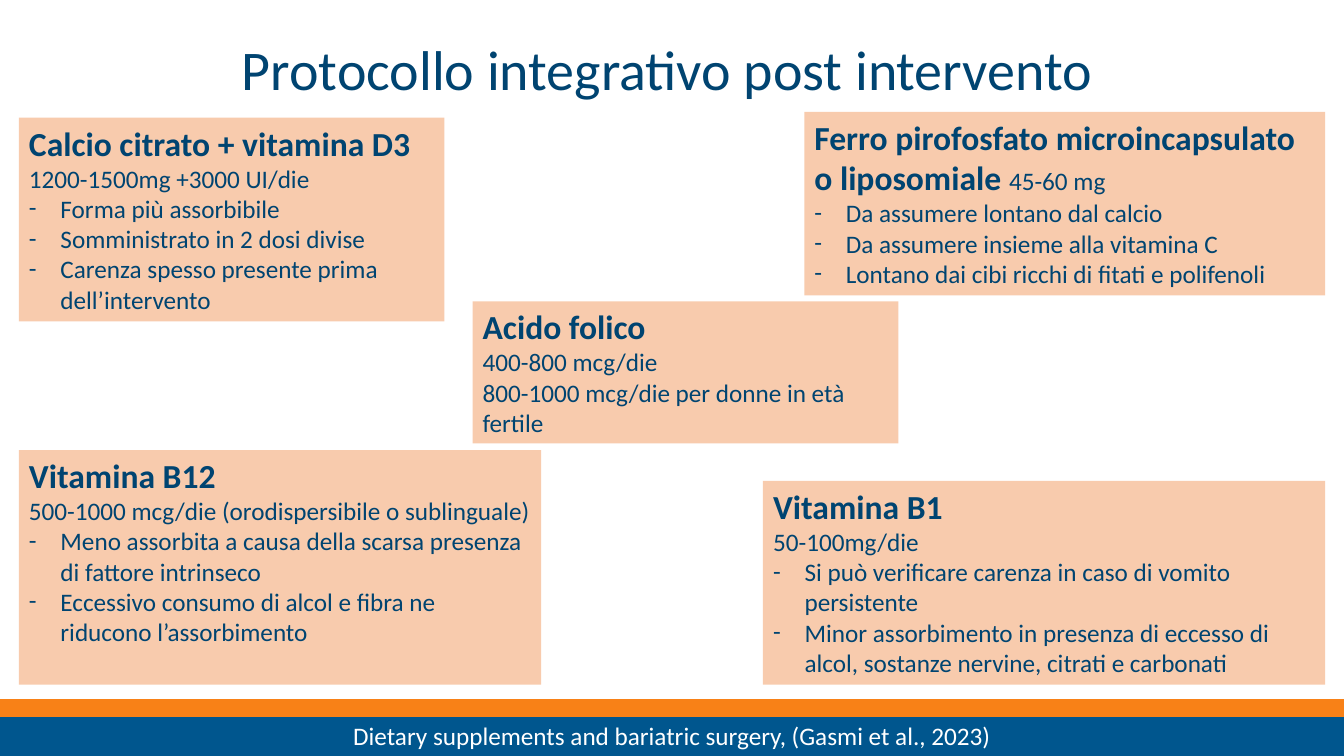
import pptx
import pptx.util
import pptx.dml.color
import pptx.enum.shapes
import pptx.enum.text
import pptx.oxml.ns
from dataclasses import dataclass
from lxml import etree

Pt = pptx.util.Pt
Align = pptx.enum.text.PP_ALIGN
Anchor = pptx.enum.text.MSO_ANCHOR


@dataclass(frozen=True)
class Theme:
    font: str = "Calibri"
    ink: str = "004471"
    card: str = "F8CBAD"
    blue: str = "00568E"
    orange: str = "F88117"
    white: str = "FFFFFF"
    title: int = 40
    head: int = 24
    body: int = 18
    indent: float = 22.5


def color(code):
    return pptx.dml.color.RGBColor.from_string(code)


class Page:
    def __init__(self, slide, theme):
        self.slide = slide
        self.theme = theme

    def place(self, shape, box):
        shape.left, shape.top, shape.width, shape.height = map(Pt, box)

    def paint(self, shape, code):
        shape.fill.solid()
        shape.fill.fore_color.rgb = color(code)

    def frame(self, shape, anchor):
        """Prepare a wrapping text frame with fixed size and insets."""
        text = shape.text_frame
        text.word_wrap = True
        text.auto_size = pptx.enum.text.MSO_AUTO_SIZE.NONE
        text.vertical_anchor = anchor
        text.margin_left = text.margin_right = Pt(7.2)
        text.margin_top = text.margin_bottom = Pt(3.6)
        return text

    def para(self, text, first, align=Align.LEFT, dash=False):
        """Return a tightly spaced paragraph, dashed or without a bullet."""
        para = text.paragraphs[0] if first else text.add_paragraph()
        para.alignment = align
        para.line_spacing = 1.0
        para.space_before = para.space_after = Pt(0)
        props = para._p.get_or_add_pPr()
        step = Pt(self.theme.indent) if dash else 0
        props.set("marL", str(step))
        props.set("indent", str(-step))
        qn = pptx.oxml.ns.qn
        if dash:
            etree.SubElement(props, qn("a:buFont"), typeface=self.theme.font)
            etree.SubElement(props, qn("a:buChar"), char="-")
        else:
            etree.SubElement(props, qn("a:buNone"))
        return para

    def run(self, para, words, size, code, bold=False):
        run = para.add_run()
        run.text = words
        font = run.font
        font.name, font.size, font.bold = self.theme.font, Pt(size), bold
        font.color.rgb = color(code)

    def title(self, words, box):
        shape = self.slide.shapes.title
        self.place(shape, box)
        para = self.para(self.frame(shape, Anchor.TOP), True)
        self.run(para, words, self.theme.title, self.theme.ink)

    def card(self, shape, box, head, dose, lines=(), items=(), same=False):
        """Fill a card; same keeps the dose on the line of the heading."""
        look = self.theme
        self.place(shape, box)
        self.paint(shape, look.card)
        text = self.frame(shape, Anchor.TOP)
        para = self.para(text, True)
        self.run(para, head, look.head, look.ink, True)
        if not same:
            para = self.para(text, False)
        self.run(para, dose, look.body, look.ink)
        for group, dash in ((lines, False), (items, True)):
            for words in group:
                para = self.para(text, False, dash=dash)
                self.run(para, words, look.body, look.ink)

    def bar(self, box, code, words=""):
        kind = pptx.enum.shapes.MSO_SHAPE.RECTANGLE
        shape = self.slide.shapes.add_shape(kind, *map(Pt, box))
        shape.shadow.inherit = False
        self.paint(shape, code)
        shape.line.color.rgb = color(code)
        shape.line.width = Pt(1)
        if words:
            para = self.para(self.frame(shape, Anchor.MIDDLE), True, Align.CENTER)
            self.run(para, words, self.theme.body, self.theme.white)


def main():
    deck = pptx.Presentation()
    deck.slide_width, deck.slide_height = Pt(960), Pt(540)
    slide = deck.slides.add_slide(deck.slide_layouts.get_by_name("Comparison"))
    theme = Theme()
    page = Page(slide, theme)
    iron, calcium, cobal, thiamin = list(slide.placeholders)[1:5]

    page.title("Protocollo integrativo post intervento", (165.6, 21, 628.6, 55.4))
    page.card(iron, (574.5, 80, 372, 131),
              "Ferro pirofosfato microincapsulato o liposomiale ", "45-60 mg",
              items=("Da assumere lontano dal calcio",
                     "Da assumere insieme alla vitamina C",
                     "Lontano dai cibi ricchi di fitati e polifenoli"),
              same=True)
    page.card(calcium, (13.5, 84, 304, 145.5),
              "Calcio citrato + vitamina D3", "1200-1500mg +3000 UI/die",
              items=("Forma più assorbibile",
                     "Somministrato in 2 dosi divise",
                     "Carenza spesso presente prima dell’intervento"))
    page.bar((0, 511.2, 960, 28.8), theme.blue,
             "Dietary supplements and bariatric surgery, (Gasmi et al., 2023)")
    page.bar((0, 499.7, 960, 12.2), theme.orange)
    page.card(cobal, (13.5, 321.5, 373, 167.5),
              "Vitamina B12", "500-1000 mcg/die (orodispersibile o sublinguale)",
              items=("Meno assorbita a causa della scarsa presenza di fattore intrinseco",
                     "Eccessivo consumo di alcol e fibra ne riducono l’assorbimento"))
    folic = (337.7, 215.3, 304, 101.5)
    page.card(slide.shapes.add_textbox(*map(Pt, folic)), folic,
              "Acido folico", "400-800 mcg/die",
              lines=("800-1000 mcg/die per donne in età fertile",))
    page.card(thiamin, (545, 343.5, 401.5, 145.5),
              "Vitamina B1", "50-100mg/die",
              items=("Si può verificare carenza in caso di vomito persistente",
                     "Minor assorbimento in presenza di eccesso di alcol, "
                     "sostanze nervine, citrati e carbonati"))
    deck.save("out.pptx")


if __name__ == "__main__":
    main()
